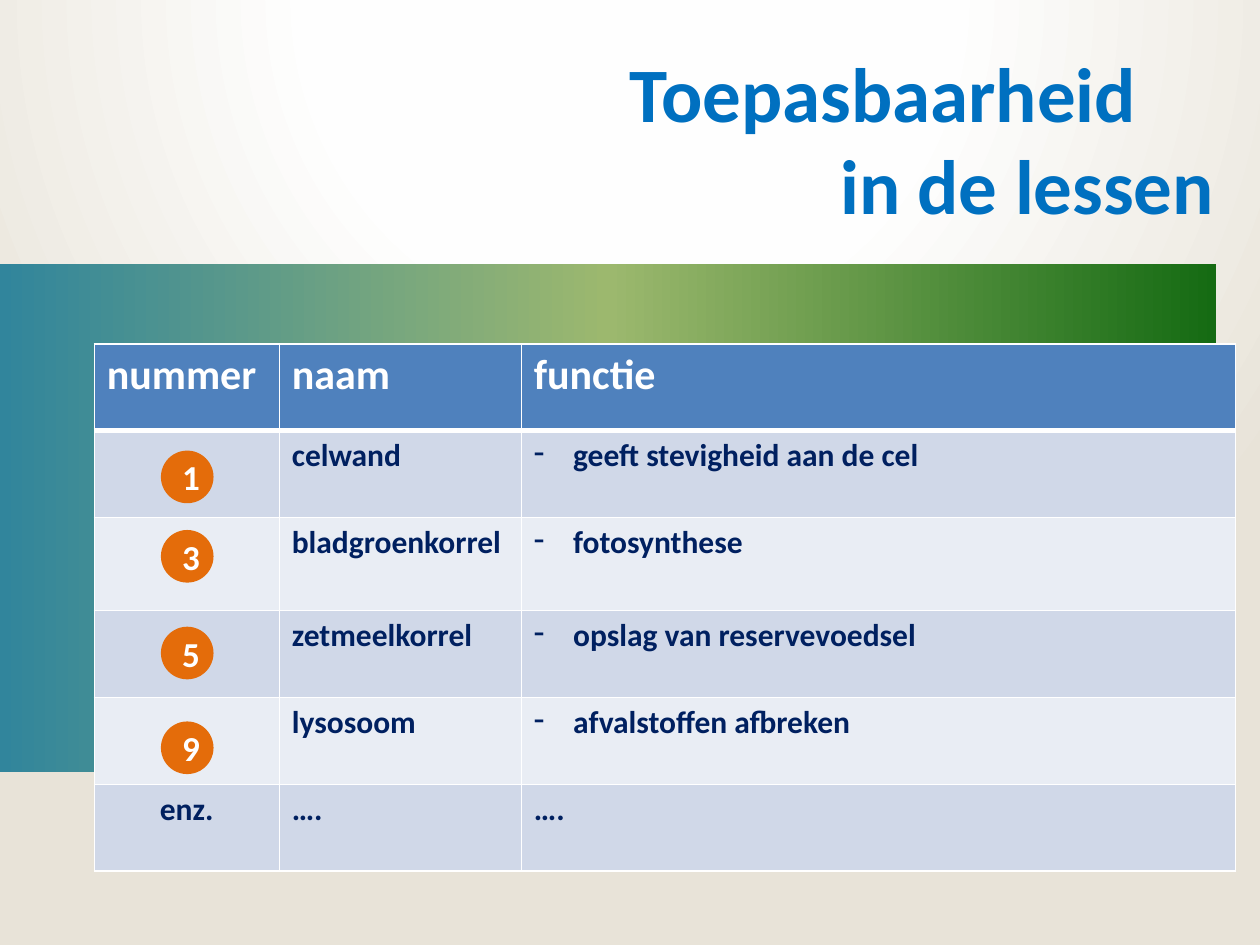
import pptx
import pptx.dml.color
import pptx.enum.shapes
import pptx.enum.text
import pptx.oxml
import pptx.oxml.ns
import pptx.util
from lxml import etree

Cm = pptx.util.Cm
Pt = pptx.util.Pt
qn = pptx.oxml.ns.qn
ALIGN = pptx.enum.text.PP_ALIGN
SHAPE = pptx.enum.shapes.MSO_SHAPE

HEADER = {"size": Pt(24), "color": "FFFFFF"}
BODY = {"size": Pt(18), "color": "002060"}
BADGE = {"size": Pt(20), "color": "FFFFFF"}
TITLE = {"size": Pt(44), "color": "0070C0"}

COLUMNS = [3.73, 4.88, 14.4]
ROW_HEIGHTS = [1.75, 1.75, 1.88, 1.75, 1.75, 1.75]
ROWS = [
    ["nummer", "naam", "functie"],
    ["", "celwand", "geeft stevigheid aan de cel"],
    ["", "bladgroenkorrel", "fotosynthese"],
    ["", "zetmeelkorrel", "opslag van reservevoedsel"],
    ["", "lysosoom", "afvalstoffen afbreken"],
    ["enz.", "….", "…."],
]
BADGES = {"1": 9.12, "3": 10.72, "5": 12.67, "9": 14.58}


def rgb(value):
    """Return the colour for a hex string."""
    return pptx.dml.color.RGBColor.from_string(value)


def paint(fill, color):
    """Give a fill one solid colour."""
    fill.solid()
    fill.fore_color.rgb = rgb(color)


def paint_gradient(fill, root, stops, direction):
    """Give a fill under root the (percent, colour) stops and a direction."""
    fill.gradient()
    grad = root.find(".//" + qn("a:gradFill"))
    for child in list(grad):
        grad.remove(child)
    gs_list = etree.SubElement(grad, qn("a:gsLst"))
    for percent, color in stops:
        gs = etree.SubElement(gs_list, qn("a:gs"), pos=str(percent * 1000))
        etree.SubElement(gs, qn("a:srgbClr"), val=color)
    grad.append(pptx.oxml.parse_xml(direction))


def write(p, text, style, align=ALIGN.LEFT):
    """Write one bold run into a paragraph."""
    p.alignment = align
    r = p.add_run()
    r.text = text
    for name, value in {"name": "Calibri", "bold": True, "size": style["size"]}.items():
        setattr(r.font, name, value)
    r.font.color.rgb = rgb(style["color"])


def add_dash(p):
    """Turn a paragraph into a dashed list item."""
    pPr = p._p.get_or_add_pPr()
    pPr.set("marL", str(Cm(0.79)))
    pPr.set("indent", str(Cm(-0.79)))
    etree.SubElement(pPr, qn("a:buChar"), char="-")


def add_borders(cell, widths):
    """Draw white borders, with a width in points for each side."""
    tcPr = cell._tc.get_or_add_tcPr()
    for side, width in widths.items():
        ln = etree.SubElement(tcPr, qn("a:ln" + side), w=str(Pt(width)))
        solid = etree.SubElement(ln, qn("a:solidFill"))
        etree.SubElement(solid, qn("a:srgbClr"), val="FFFFFF")


def add_band(slide):
    """Add the wide gradient band behind the table."""
    sp = slide.shapes.add_shape(SHAPE.RECTANGLE, Cm(0), Cm(5.33), Cm(24.51), Cm(10.24))
    sp.shadow.inherit = False
    sp.line.fill.background()
    stops = [(0, "31859C"), (50, "9CB86E"), (100, "156B13")]
    paint_gradient(sp.fill, sp._element, stops,
                   f'<a:lin {pptx.oxml.ns.nsdecls("a")} ang="0" scaled="0"/>')


def add_cell_table(slide):
    """Add the table of cell parts."""
    table = slide.shapes.add_table(
        len(ROWS), len(COLUMNS), Cm(1.9), Cm(6.93),
        Cm(sum(COLUMNS)), Cm(sum(ROW_HEIGHTS))).table
    for column, width in zip(table.columns, COLUMNS):
        column.width = Cm(width)
    for i, (texts, height) in enumerate(zip(ROWS, ROW_HEIGHTS)):
        table.rows[i].height = Cm(height)
        fill = "4F81BD" if i == 0 else ("E9EDF4", "D0D8E8")[i % 2]
        for j, text in enumerate(texts):
            cell = table.cell(i, j)
            add_borders(cell, {"L": 1, "R": 1, "T": 3 if i == 1 else 1, "B": 3 if i == 0 else 1})
            paint(cell.fill, fill)
            p = cell.text_frame.paragraphs[0]
            if text:
                centred = i > 0 and j == 0
                write(p, text, BODY if i else HEADER, ALIGN.CENTER if centred else ALIGN.LEFT)
            if j == 2 and 0 < i < len(ROWS) - 1:
                add_dash(p)


def add_badge(slide, number, top):
    """Add a numbered orange circle."""
    sp = slide.shapes.add_shape(SHAPE.OVAL, Cm(3.28), Cm(top), Cm(0.99), Cm(0.99))
    sp.shadow.inherit = False
    paint(sp.fill, "E46C0A")
    paint(sp.line.fill, "E46C0A")
    sp.line.width = Pt(2)
    write(sp.text_frame.paragraphs[0], number, BADGE, ALIGN.CENTER)


def add_title(slide):
    """Add the two-line title."""
    tf = slide.shapes.add_textbox(Cm(12.7), Cm(0.91), Cm(11.79), Cm(5.46)).text_frame
    settings = {"word_wrap": True, "auto_size": pptx.enum.text.MSO_AUTO_SIZE.SHAPE_TO_FIT_TEXT,
                "margin_left": 0, "margin_right": 0, "margin_top": 0, "margin_bottom": 0}
    for name, value in settings.items():
        setattr(tf, name, value)
    write(tf.paragraphs[0], "Toepasbaarheid", TITLE)
    write(tf.add_paragraph(), "in de lessen", TITLE, ALIGN.RIGHT)


def main():
    """Build and save the slide."""
    prs = pptx.Presentation()
    prs.slide_width, prs.slide_height = Cm(25.4), Cm(19.05)
    slide = prs.slides.add_slide(prs.slide_layouts[6])
    stops = [(0, "FFFFFF"), (40, "FEFEFE"), (100, "E8E3D8")]
    paint_gradient(slide.background.fill, slide._element, stops,
                   f'<a:path {pptx.oxml.ns.nsdecls("a")} path="circle">'
                   '<a:fillToRect l="50000" t="-80000" r="50000" b="180000"/></a:path>')
    add_band(slide)
    add_cell_table(slide)
    for number, top in BADGES.items():
        add_badge(slide, number, top)
    add_title(slide)
    prs.save("out.pptx")


if __name__ == "__main__":
    main()
